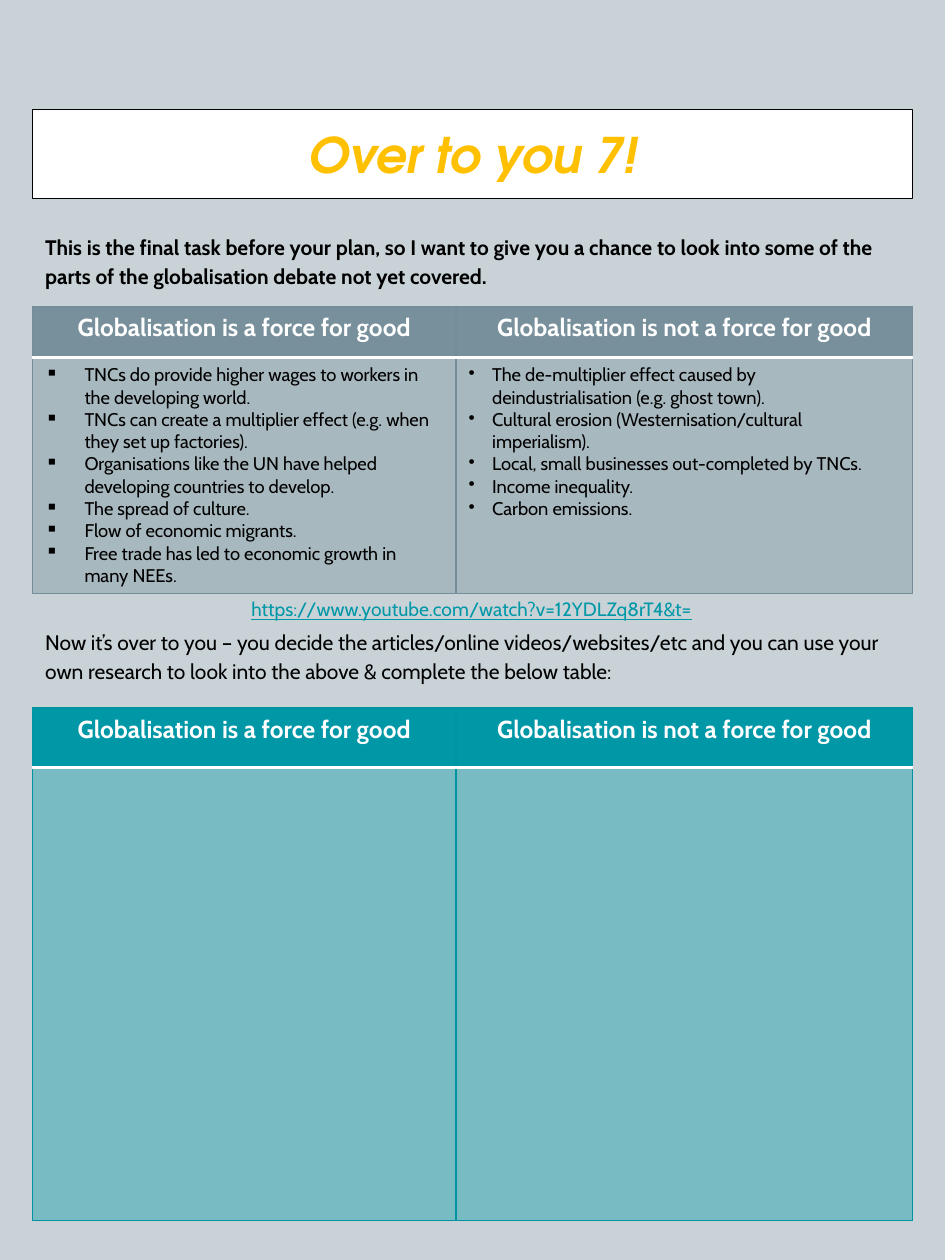
from lxml import etree
from pptx import Presentation
from pptx.dml.color import RGBColor
from pptx.enum.text import MSO_ANCHOR, MSO_AUTO_SIZE, PP_ALIGN
from pptx.oxml.ns import qn
from pptx.util import Pt

CENTER, LEFT = PP_ALIGN.CENTER, PP_ALIGN.LEFT
TOP, MIDDLE = MSO_ANCHOR.TOP, MSO_ANCHOR.MIDDLE
NO_AUTOFIT = MSO_AUTO_SIZE.NONE

BACKGROUND = RGBColor(0xC9, 0xD3, 0xD7)
BLACK = RGBColor(0, 0, 0)
WHITE = RGBColor(0xFF, 0xFF, 0xFF)
GOLD = RGBColor(0xFF, 0xC0, 0x00)
TEAL = RGBColor(0x00, 0x97, 0xA7)
TEAL_LINE = RGBColor(0x00, 0x94, 0xA3)
SLATE = RGBColor(0x78, 0x90, 0x9C)
SLATE_LINE = RGBColor(0x74, 0x8D, 0x99)

MARGIN, CONTENT_WIDTH = 18.6, 503
COLUMN_WIDTHS = (242, 261)
HEADERS = ("Globalisation is a force for good", "Globalisation is not a force for good")
ARGUMENTS_FOR = (
    "TNCs do provide higher wages to workers in the developing world.",
    "TNCs can create a multiplier effect (e.g. when they set up factories).",
    "Organisations like the UN have helped developing countries to develop.",
    "The spread of culture.",
    "Flow of economic migrants.",
    "Free trade has led to economic growth in many NEEs.",
)
ARGUMENTS_AGAINST = (
    "The de-multiplier effect caused by deindustrialisation (e.g. ghost town).",
    "Cultural erosion (Westernisation/cultural imperialism).",
    "Local, small businesses out-completed by TNCs.",
    "Income inequality.",
    "Carbon emissions.",
)


class Worksheet:
    title_font = {"name": "TeX Gyre Adventor", "size": Pt(28), "bold": True, "italic": True}
    body_font = {"name": "Cabin", "size": Pt(12)}
    header_font = {"name": "Cabin", "size": Pt(14), "bold": True}
    list_font = {"name": "Cabin", "size": Pt(10.5), "bold": False}
    link_font = {"name": "Cabin", "size": Pt(11), "underline": True}

    def __init__(self, slide):
        self.slide = slide
        slide.background.fill.solid()
        slide.background.fill.fore_color.rgb = BACKGROUND

    def set_text(self, paragraph, text, font, color, align=LEFT):
        paragraph.text = text
        paragraph.alignment = align
        for name, value in font.items():
            setattr(paragraph.font, name, value)
        paragraph.font.color.rgb = color

    def bullet(self, paragraph, character, indent):
        properties = paragraph._p.get_or_add_pPr()
        properties.set("marL", str(Pt(indent)))
        properties.set("indent", str(-Pt(indent)))
        if character:
            etree.SubElement(properties, qn("a:buChar"), char=character)
        else:
            etree.SubElement(properties, qn("a:buNone"))

    def place(self, shape, top, height, anchor):
        box = {"left": MARGIN, "top": top, "width": CONTENT_WIDTH, "height": height}
        for name, value in box.items():
            setattr(shape, name, Pt(value))
        frame = shape.text_frame
        for side in ("left", "top", "right", "bottom"):
            setattr(frame, f"margin_{side}", Pt(7.2))
        frame.word_wrap = True
        frame.auto_size = NO_AUTOFIT
        frame.vertical_anchor = anchor
        return frame

    def title(self, text, top, height):
        shape = self.slide.shapes.title
        frame = self.place(shape, top, height, MIDDLE)
        shape.fill.solid()
        shape.fill.fore_color.rgb = WHITE
        shape.line.color.rgb = BLACK
        shape.line.width = Pt(0.75)
        self.set_text(frame.paragraphs[0], text, self.title_font, GOLD, CENTER)

    def instructions(self, items, top, height):
        frame = self.place(self.slide.placeholders[1], top, height, TOP)
        for index, (text, bold, space_before) in enumerate(items):
            paragraph = frame.add_paragraph() if index else frame.paragraphs[0]
            self.bullet(paragraph, None, 0)
            paragraph.line_spacing = 1.15
            paragraph.space_before = Pt(space_before)
            self.set_text(paragraph, text, {**self.body_font, "bold": bold}, BLACK)

    def link_text(self, text, left, top, width, height):
        box = self.slide.shapes.add_textbox(Pt(left), Pt(top), Pt(width), Pt(height))
        box.text_frame.word_wrap = True
        self.set_text(box.text_frame.paragraphs[0], text, self.link_font, TEAL, CENTER)

    def style_cell(self, cell, fill, line, white_side, opacity=None):
        cell.fill.solid()
        cell.fill.fore_color.rgb = fill
        properties = cell._tc.get_or_add_tcPr()
        if opacity:
            color = properties.find(".//" + qn("a:srgbClr"))
            etree.SubElement(color, qn("a:alpha"), val=str(opacity * 1000))
        for index, side in enumerate(("lnL", "lnR", "lnT", "lnB")):
            color, width = (WHITE, 2) if side == white_side else (line, 0.75)
            border = etree.Element(qn("a:" + side), w=str(Pt(width)))
            solid = etree.SubElement(border, qn("a:solidFill"))
            etree.SubElement(solid, qn("a:srgbClr"), val=str(color))
            properties.insert(index, border)

    def table(self, top, row_heights, fill, line, lists=()):
        frame = self.slide.shapes.add_table(
            2, 2, Pt(MARGIN), Pt(top), Pt(CONTENT_WIDTH), Pt(sum(row_heights)))
        table = frame.table
        for row, height in zip(table.rows, row_heights):
            row.height = Pt(height)
        for index, (width, header) in enumerate(zip(COLUMN_WIDTHS, HEADERS)):
            table.columns[index].width = Pt(width)
            head, body = table.cell(0, index), table.cell(1, index)
            self.style_cell(head, fill, line, "lnB")
            self.style_cell(body, fill, line, "lnT", opacity=40)
            self.set_text(head.text_frame.paragraphs[0], header, self.header_font, WHITE, CENTER)
        for index, (items, character, indent) in enumerate(lists):
            text_frame = table.cell(1, index).text_frame
            for number, text in enumerate(items):
                paragraph = text_frame.add_paragraph() if number else text_frame.paragraphs[0]
                self.bullet(paragraph, character, indent)
                self.set_text(paragraph, text, self.list_font, BLACK)


def main():
    presentation = Presentation()
    presentation.slide_width, presentation.slide_height = Pt(540), Pt(720)
    sheet = Worksheet(presentation.slides.add_slide(presentation.slide_layouts[1]))
    sheet.instructions((
        ("This is the final task before your plan, so I want to give you a chance to look into "
         "some of the parts of the globalisation debate not yet covered.", True, 0),
        ("Now it’s over to you – you decide the articles/online videos/websites/etc and you can "
         "use your own research to look into the above & complete the below table:", False, 193),
    ), 124.5, 478)
    sheet.title("Over to you 7!", 62.5, 51)
    sheet.table(404.6, (34, 259), TEAL, TEAL_LINE)
    sheet.table(175, (29.5, 133.5), SLATE, SLATE_LINE,
                ((ARGUMENTS_FOR, "▪", 22.5), (ARGUMENTS_AGAINST, "•", 13.5)))
    sheet.link_text("https://www.youtube.com/watch?v=12YDLZq8rT4&t=", 82, 338, 375, 21)
    presentation.save("out.pptx")


if __name__ == "__main__":
    main()
